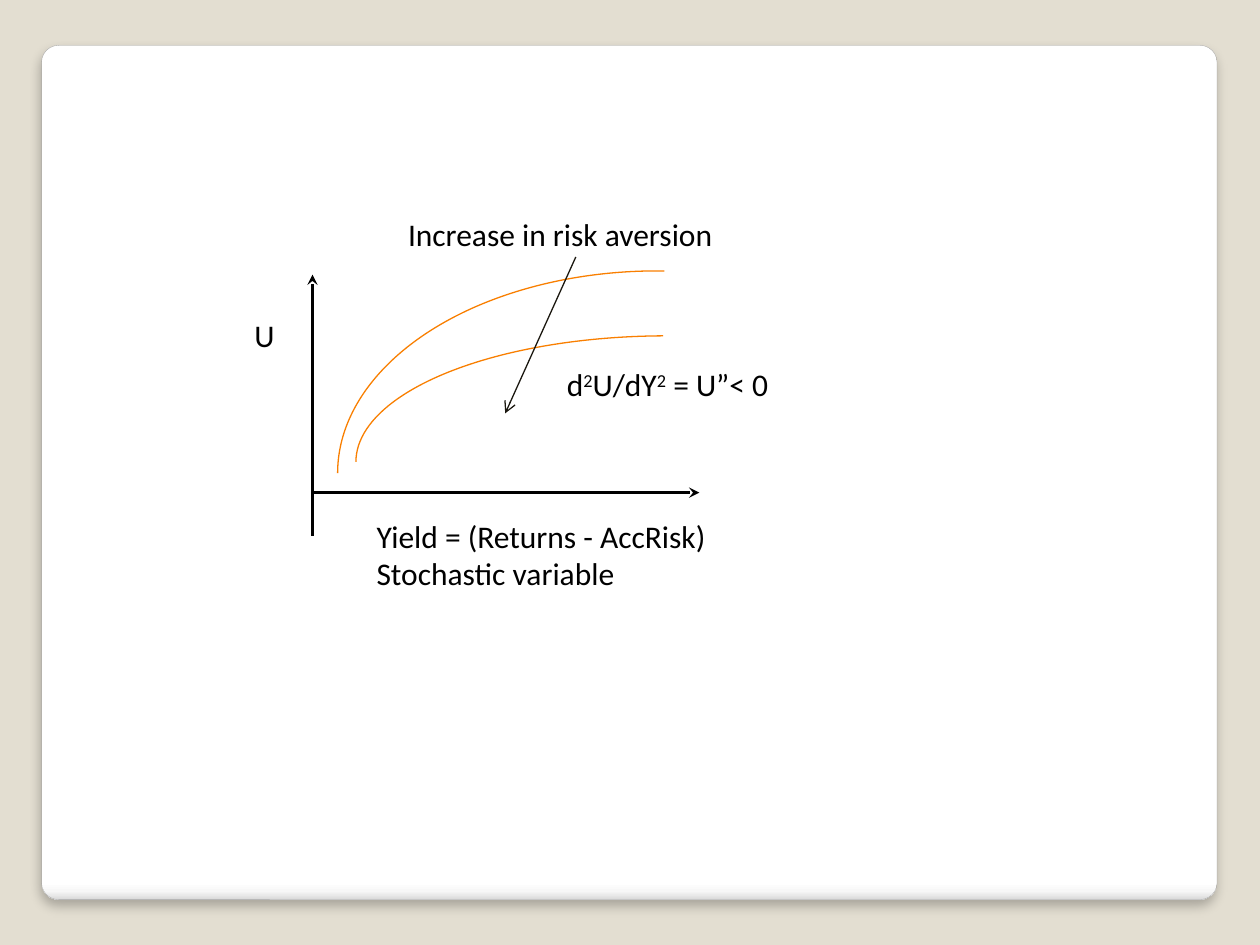
from lxml.etree import SubElement as Sub
from pptx import Presentation
from pptx.dml.color import RGBColor as RGB
from pptx.enum.shapes import MSO_CONNECTOR as Link, MSO_SHAPE as Kind
from pptx.enum.text import MSO_AUTO_SIZE as Fit
from pptx.oxml.ns import qn
from pptx.util import Inches, Pt

HUE = {"back": "E3DED1", "edge": "A4A4A4", "ink": "000000",
       "curve": "F97F00", "arrow": "1B1810"}


def stroke(line, hue, width):
    line.color.rgb = RGB.from_string(HUE[hue])
    line.width = Pt(width)


def tint(node, hue):
    """Add an srgbClr child to an XML node and return it."""
    return Sub(node, qn("a:srgbClr"), val=hue)


deck = Presentation()
deck.slide_width, deck.slide_height = Inches(10), Inches(7.5)
slide = deck.slides.add_slide(deck.slide_layouts[6])
slide.background.fill.solid()
slide.background.fill.fore_color.rgb = RGB.from_string(HUE["back"])
shapes = slide.shapes

# White panel with a shaded lower edge and a soft shadow
panel = shapes.add_shape(Kind.ROUNDED_RECTANGLE, Inches(0.33), Inches(0.36),
                         Inches(9.33), Inches(6.78))
panel.adjustments[0] = 0.02
stroke(panel.line, "edge", 0.16)
panel.fill.gradient()
panel.fill.gradient_angle = 270
props = panel._element.spPr
stops = props.find(".//" + qn("a:gsLst"))
for stop in list(stops):
    stops.remove(stop)
for place, hue in ((0, "FFFFFF"), (98, "FFFFFF"), (99, "F7F7F7"), (100, "DADADA")):
    tint(Sub(stops, qn("a:gs"), pos=str(place * 1000)), hue)
panel.shadow.inherit = False
shade = Sub(props.find(qn("a:effectLst")), qn("a:outerShdw"), blurRad=str(Pt(6)),
            dist=str(Pt(4)), dir="5400000", algn="tl", rotWithShape="0")
Sub(tint(shade, HUE["ink"]), qn("a:alpha"), val="25000")

# Utility curves: quarter arcs turned on their side
for left, top, width, height, end in ((3.61, 1.22, 3.21, 5.07, 1.26),
                                      (4.29, 1.2, 2, 4.93, 215.09)):
    curve = shapes.add_shape(Kind.ARC, Inches(left), Inches(top),
                             Inches(width), Inches(height))
    curve.rotation = 270
    curve.adjustments[0], curve.adjustments[1] = 162, end
    curve.fill.background()
    stroke(curve.line, "curve", 0.75)
    curve.shadow.inherit = False

# Axes, then the arrow across the curves
for x1, y1, x2, y2, hue, width, tip, style in (
        (2.48, 2.18, 2.48, 4.25, "ink", 1.75, "headEnd", "stealth"),
        (2.48, 3.91, 5.55, 3.91, "ink", 1.75, "tailEnd", "stealth"),
        (4.57, 2.04, 4.01, 3.28, "arrow", 0.75, "tailEnd", "arrow")):
    line = shapes.add_connector(Link.STRAIGHT, Inches(x1), Inches(y1),
                                Inches(x2), Inches(y2))
    stroke(line.line, hue, width)
    Sub(line.line._get_or_add_ln(), qn("a:" + tip), type=style)
    Sub(line._element.spPr, qn("a:effectLst"))

# Labels: each paragraph is a list of runs, "^" marks a superscript
for left, top, width, height, paras in (
        (1.92, 2.46, 0.36, 0.4, [["U"]]),
        (2.89, 4.05, 2.84, 0.71, [["Yield = (Returns - AccRisk)"],
                                  ["Stochastic variable"]]),
        (3.14, 1.66, 2.64, 0.4, [["Increase in risk aversion"]]),
        (4.4, 2.85, 1.84, 0.4, [["d", "^2", "U/dY", "^2", " = U”< 0"]])):
    frame = shapes.add_textbox(Inches(left), Inches(top),
                               Inches(width), Inches(height)).text_frame
    frame.word_wrap = False
    frame.auto_size = Fit.SHAPE_TO_FIT_TEXT
    for i, parts in enumerate(paras):
        para = frame.add_paragraph() if i else frame.paragraphs[0]
        for part in parts:
            run = para.add_run()
            run.text = part.lstrip("^")
            run.font.name, run.font.size = "Calibri", Pt(18)
            run.font.color.rgb = RGB.from_string(HUE["ink"])
            if part.startswith("^"):
                run.font._element.set("baseline", "30000")

deck.save("out.pptx")
